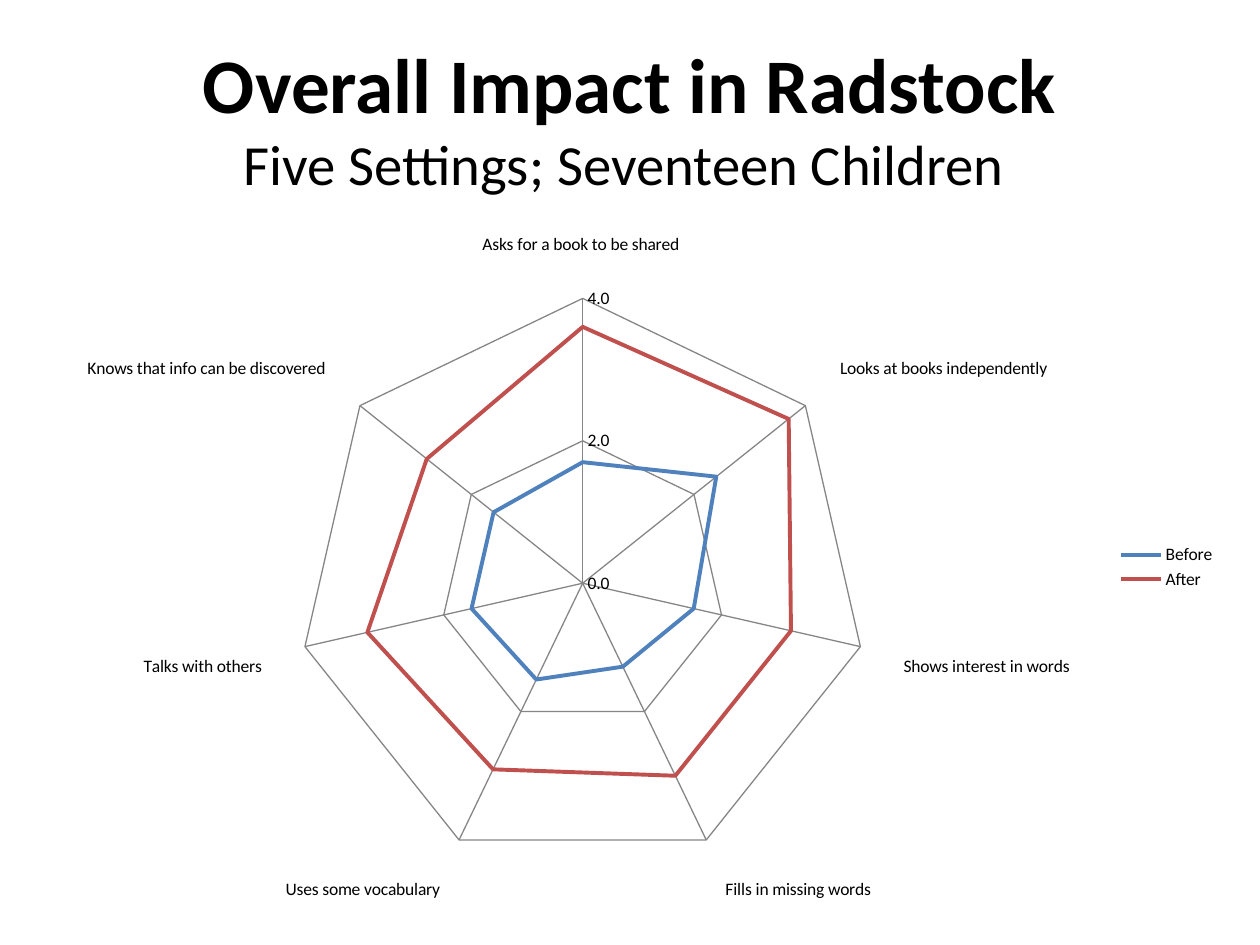
from pptx import Presentation
from pptx import util as u
from pptx.chart.data import CategoryChartData
from pptx.dml.color import RGBColor
from pptx.enum import chart as charts, text


def color(value):
    return RGBColor.from_string(value)


class SlideBuilder:
    font = "Calibri"
    ink = "000000"
    grid = "868686"

    def __init__(self, deck):
        self.slide = deck.slides.add_slide(deck.slide_layouts[5])

    def place(self, box, left, top, width, height):
        box.left, box.top = u.Pt(left), u.Pt(top)
        box.width, box.height = u.Pt(width), u.Pt(height)

    def style(self, font, size, bold=False):
        font.name, font.size, font.bold = self.font, u.Pt(size), bold
        font.color.rgb = color(self.ink)

    def title(self, lines, sizes, area):
        box = self.slide.shapes.title
        self.place(box, *area)
        frame = box.text_frame
        frame.text = "\v".join(lines)
        frame.word_wrap = True
        frame.auto_size = text.MSO_AUTO_SIZE.NONE
        frame.vertical_anchor = text.MSO_ANCHOR.MIDDLE
        para = frame.paragraphs[0]
        para.alignment = text.PP_ALIGN.CENTER
        for index, (span, size) in enumerate(zip(para.runs, sizes)):
            self.style(span.font, size, bold=index == 0)

    def radar(self, categories, series, area):
        data = CategoryChartData(number_format="0.0")
        data.categories = categories
        for name, values, _ in series:
            data.add_series(name, values)
        chart = self.slide.shapes.add_chart(
            charts.XL_CHART_TYPE.RADAR, *map(u.Pt, area), data).chart
        self.style(chart.font, 10)
        chart.has_title = False
        chart.has_legend = True
        chart.legend.position = charts.XL_LEGEND_POSITION.RIGHT
        chart.legend.include_in_layout = False

        # Axes and web
        for axis in (chart.category_axis, chart.value_axis):
            axis.has_major_gridlines = True
            axis.major_tick_mark = charts.XL_TICK_MARK.NONE
            axis.minor_tick_mark = charts.XL_TICK_MARK.NONE
            for line in (axis.major_gridlines.format.line, axis.format.line):
                line.color.rgb = color(self.grid)
                line.width = u.Pt(0.75)
        chart.category_axis.format.line.fill.background()
        scale = chart.value_axis
        scale.minimum_scale, scale.maximum_scale, scale.major_unit = 0, 4, 2
        scale.tick_labels.number_format = "0.0"
        scale.tick_labels.number_format_is_linked = False

        # Series lines
        plot = chart.plots[0]
        plot.vary_by_categories = False
        for drawn, (_, _, shade) in zip(plot.series, series):
            drawn.format.line.color.rgb = color(shade)
            drawn.format.line.width = u.Pt(2.25)


def main():
    deck = Presentation()
    deck.slide_width, deck.slide_height = u.Pt(720), u.Pt(540)
    builder = SlideBuilder(deck)

    # Heading
    builder.title(
        ["Overall Impact in Radstock", "Five Settings; Seventeen Children "],
        [44.1, 32.4], (36, 21.6, 648, 90))

    # Scores before and after
    builder.radar(
        ["Asks for a book to be shared ", "Looks at books independently",
         "Shows interest in words", "Fills in missing words",
         "Uses some vocabulary", "Talks with others",
         "Knows that info can be discovered"],
        [("Before", [1.7, 2.4, 1.6, 1.3, 1.5, 1.6, 1.6], "4F81BD"),
         ("After", [3.6, 3.7, 3, 3, 2.9, 3.1, 2.8], "C0504D")],
        (23.76, 126, 678.24, 396))

    deck.save("out.pptx")


if __name__ == "__main__":
    main()
